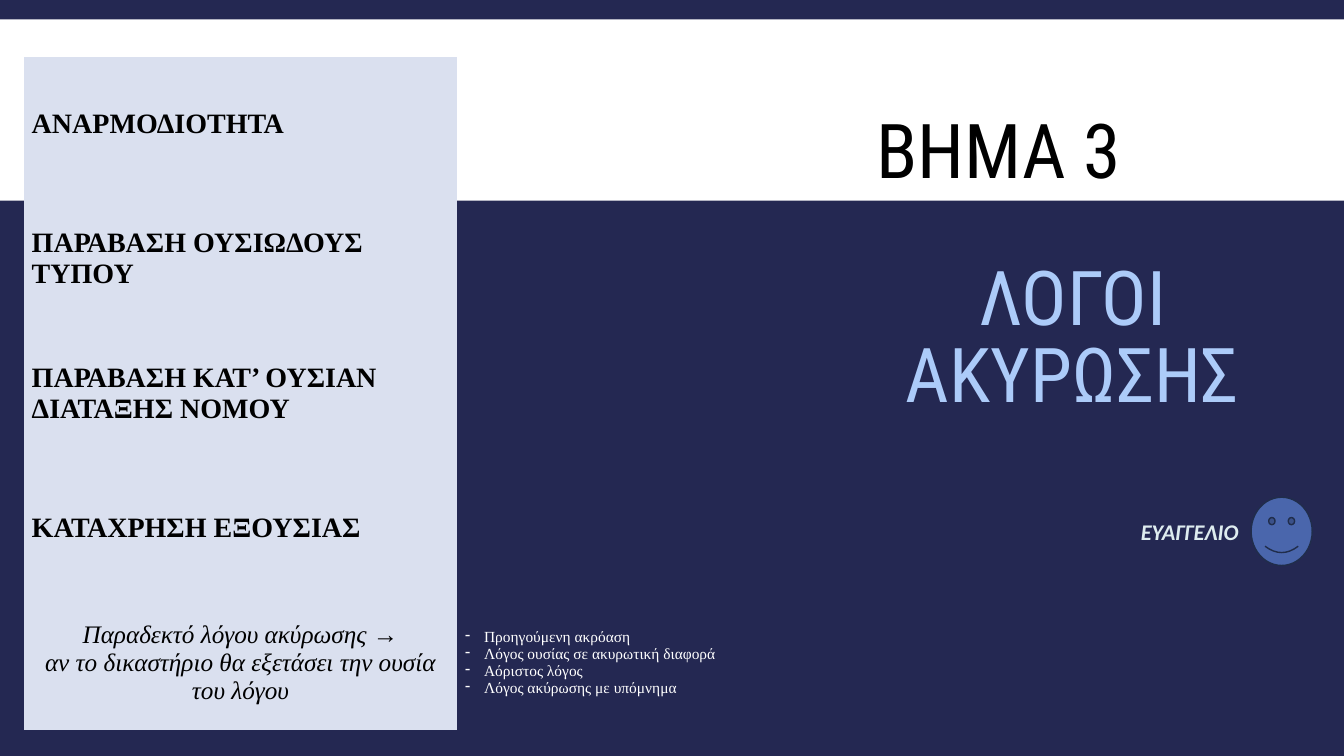
from dataclasses import dataclass

from lxml import etree
from pptx import Presentation
from pptx.dml.color import RGBColor
from pptx.enum.shapes import MSO_SHAPE
from pptx.enum.text import MSO_ANCHOR, PP_ALIGN
from pptx.oxml.ns import qn
from pptx.util import Cm, Pt

RECTANGLE = MSO_SHAPE.RECTANGLE
SMILEY = MSO_SHAPE.SMILEY_FACE
MIDDLE, TOP = MSO_ANCHOR.MIDDLE, MSO_ANCHOR.TOP
LEFT, CENTER = PP_ALIGN.LEFT, PP_ALIGN.CENTER


@dataclass(frozen=True)
class Theme:
    navy: str = "242852"
    white: str = "FFFFFF"
    black: str = "000000"
    sky: str = "ACCBF9"
    pale: str = "DEECEF"
    cell: str = "DAE0EF"
    face: str = "4A66AC"
    face_line: str = "202D4B"
    heading_font: str = "Roboto Condensed"
    table_font: str = "Times New Roman"
    label_font: str = "Calibri"
    heading_size: int = 54
    ground_size: int = 20
    question_size: int = 18
    label_size: int = 16
    example_size: int = 11


theme = Theme()


def style(paragraph, name, size, color, bold=False, italic=False):
    font = paragraph.font
    font.name, font.size = name, Pt(size)
    font.bold, font.italic = bold, italic
    font.color.rgb = RGBColor.from_string(color)


def add_text(page, text, left, top, width, height, anchor, align):
    box = page.shapes.add_textbox(Cm(left), Cm(top), Cm(width), Cm(height))
    frame = box.text_frame
    frame.word_wrap = True
    frame.vertical_anchor = anchor
    frame.text = text
    paragraph = frame.paragraphs[0]
    paragraph.alignment = align
    return paragraph


deck = Presentation()
deck.slide_width, deck.slide_height = Cm(33.87), Cm(19.05)
page = deck.slides.add_slide(deck.slide_layouts[6])

# Background and white band
page.background.fill.solid()
page.background.fill.fore_color.rgb = RGBColor.from_string(theme.navy)
band = page.shapes.add_shape(RECTANGLE, 0, Cm(0.49), deck.slide_width, Cm(4.57))
band.shadow.inherit = False
band.fill.solid()
band.fill.fore_color.rgb = RGBColor.from_string(theme.white)
band.line.fill.background()

# Title
title = add_text(page, "ΛΟΓΟΙ ΑΚΥΡΩΣΗΣ", 21.29, 6.5, 11.48, 4.19, MIDDLE, CENTER)
title.line_spacing = 0.85
style(title, theme.heading_font, theme.heading_size, theme.sky)

# Table of grounds: one filled column, one clear column
grounds = [
    "ΑΝΑΡΜΟΔΙΟΤΗΤΑ",
    "ΠΑΡΑΒΑΣΗ ΟΥΣΙΩΔΟΥΣ ΤΥΠΟΥ",
    "ΠΑΡΑΒΑΣΗ ΚΑΤ’ ΟΥΣΙΑΝ ΔΙΑΤΑΞΗΣ ΝΟΜΟΥ",
    "ΚΑΤΑΧΡΗΣΗ ΕΞΟΥΣΙΑΣ",
]
question = "Παραδεκτό λόγου ακύρωσης →\nαν το δικαστήριο θα εξετάσει την ουσία του λόγου"
examples = [
    "Προηγούμενη ακρόαση",
    "Λόγος ουσίας σε ακυρωτική διαφορά",
    "Αόριστος λόγος",
    "Λόγος ακύρωσης με υπόμνημα",
]
frame = page.shapes.add_table(5, 2, Cm(0.6), Cm(1.44), Cm(19.79), Cm(16.95))
table = frame.table
table.first_row = table.horz_banding = False
# "No Style, No Grid" removes the default white borders
table_style = frame.element.find(".//" + qn("a:tableStyleId"))
table_style.text = "{2D5ABB26-0587-4C30-8999-92F81FD0307C}"
table.columns[0].width, table.columns[1].width = Cm(10.92), Cm(8.87)

for row, text in enumerate(grounds + [question]):
    table.rows[row].height = Cm(3.39)
    for cell in table.rows[row].cells:
        cell.vertical_anchor = MIDDLE
        cell.margin_left = cell.margin_right = Cm(0.2)
        cell.margin_top = cell.margin_bottom = Cm(0.2)
        cell.fill.background()
    ground = table.cell(row, 0)
    ground.fill.solid()
    ground.fill.fore_color.rgb = RGBColor.from_string(theme.cell)
    ground.text = text
    for paragraph in ground.text_frame.paragraphs:
        if text == question:
            paragraph.alignment = CENTER
            style(paragraph, theme.table_font, theme.question_size, theme.black, italic=True)
        else:
            style(paragraph, theme.table_font, theme.ground_size, theme.black, bold=True)

# Dashed list beside the question
example_cell = table.cell(4, 1)
example_cell.text = "\n".join(examples)
for paragraph in example_cell.text_frame.paragraphs:
    properties = paragraph._p.get_or_add_pPr()
    properties.set("marL", str(Cm(0.48)))
    properties.set("indent", str(-Cm(0.48)))
    etree.SubElement(properties, qn("a:buChar")).set("char", "-")
    style(paragraph, theme.table_font, theme.example_size, theme.white)

# Smiley and its label
smiley = page.shapes.add_shape(SMILEY, Cm(31.53), Cm(12.53), Cm(1.54), Cm(1.72))
smiley.shadow.inherit = False
smiley.fill.solid()
smiley.fill.fore_color.rgb = RGBColor.from_string(theme.face)
smiley.line.color.rgb = RGBColor.from_string(theme.face_line)
smiley.line.width = Pt(1)
label = add_text(page, "ΕΥΑΓΓΕΛΙΟ", 28.5, 12.93, 4.6, 0.94, TOP, LEFT)
style(label, theme.label_font, theme.label_size, theme.pale, bold=True, italic=True)

# Step heading
step = add_text(page, "ΒΗΜΑ 3", 21.84, 2.46, 8.94, 2.57, TOP, LEFT)
style(step, theme.heading_font, theme.heading_size, theme.black)

deck.save("out.pptx")
